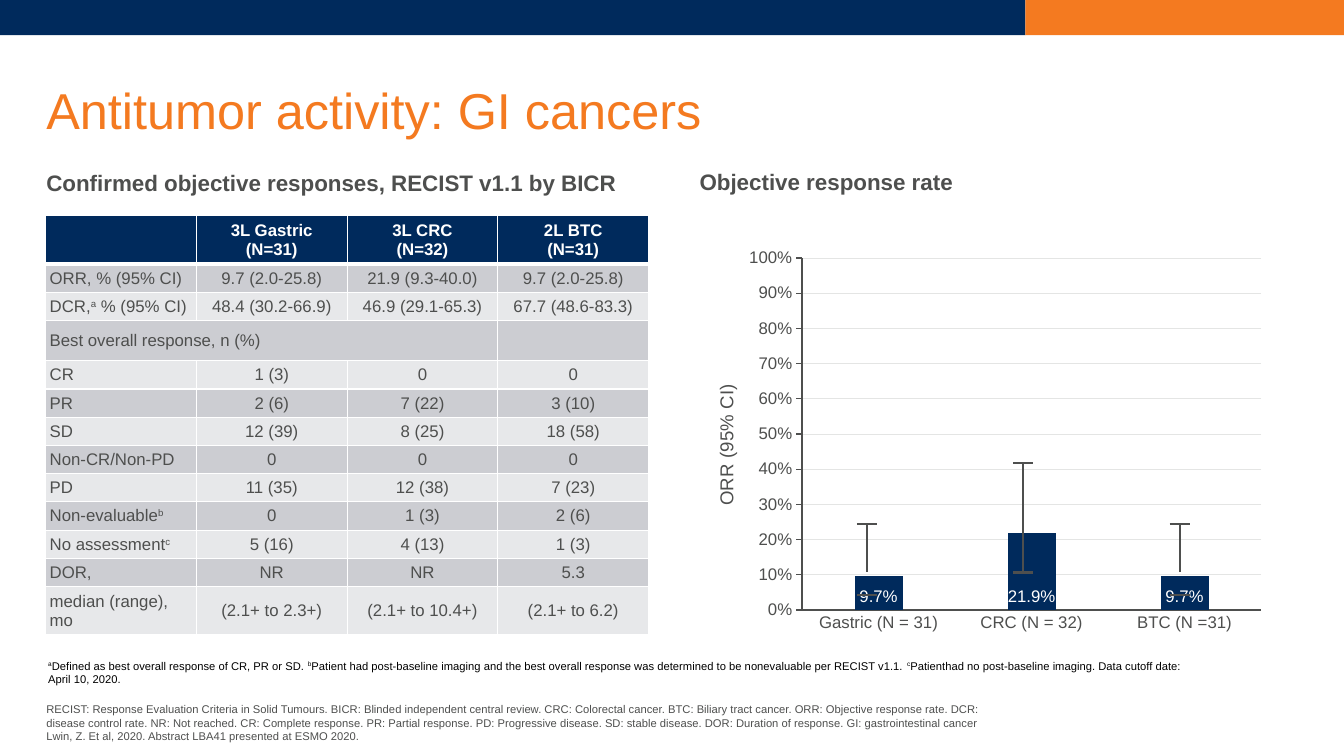
from lxml import etree
from pptx import Presentation
from pptx import util as u
from pptx.chart import data as cd
from pptx.dml.color import RGBColor
from pptx.enum import chart as ch, shapes, text
from pptx.oxml import parse_xml
from pptx.oxml.ns import nsdecls, qn

COLORS = {"navy": "002A5C", "orange": "F47A20", "gray": "4E4F4E", "black": "000000",
          "white": "FFFFFF", "dark_band": "CCCDD2", "light_band": "E7E8EA", "grid": "E4E5E4"}
FONT = "Arial"
SLIDE_W, SLIDE_H = 13.33, 7.5

BANDS = [(0, 76.3, "navy"), (76.3, 23.7, "orange")]
BAND_H = 4.67

TEXTS = [
    {"box": (3.45, 5.33, 93.25, 19.33), "size": 36, "color": "orange", "inset": (0, 0, 0, 0),
     "anchor": "MIDDLE", "spacing": 0.9, "lines": "Antitumor activity: GI cancers"},
    {"box": (3.45, 22.4, 89.6, 3.6), "size": 16, "color": "gray", "bold": True,
     "inset": (0, 0, 0.1, 0), "lines": "Confirmed objective responses, RECIST v1.1 by BICR"},
    {"box": (51.31, 21.6, 31.7, 4.93), "size": 16, "color": "gray", "bold": True,
     "lines": "Objective response rate"},
    {"box": (2.85, 86.53, 86.5, 4.93), "size": 8, "color": "black",
     "lines": "^a^Defined as best overall response of CR, PR or SD. ^b^Patient had post-baseline "
              "imaging and the best overall response was determined to be nonevaluable per RECIST "
              "v1.1. ^c^Patienthad no post-baseline imaging. Data cutoff date: April 10, 2020."},
    {"box": (3.45, 92.93, 70.3, 5.33), "size": 8, "color": "gray", "inset": (0, 0, 0, 0),
     "anchor": "BOTTOM",
     "lines": "RECIST: Response Evaluation Criteria in Solid Tumours. BICR: Blinded independent "
              "central review. CRC: Colorectal cancer. BTC: Biliary tract cancer. ORR: Objective "
              "response rate. DCR: disease control rate. NR: Not reached. CR: Complete response. "
              "PR: Partial response. PD: Progressive disease. SD: stable disease. DOR: Duration of "
              "response. GI: gastrointestinal cancer\n"
              "Lwin, Z. Et al, 2020. Abstract LBA41 presented at ESMO 2020."},
]

ROWS = [
    ("", "3L Gastric\n(N=31)", "3L CRC\n(N=32)", "2L BTC\n(N=31)"),
    ("ORR, % (95% CI)", "9.7 (2.0-25.8)", "21.9 (9.3-40.0)", "9.7 (2.0-25.8)"),
    ("DCR,^a^ % (95% CI)", "48.4 (30.2-66.9)", "46.9 (29.1-65.3)", "67.7 (48.6-83.3)"),
    ("Best overall response, n (%)", "", "", ""),
    ("CR", "1 (3)", "0", "0"),
    ("PR", "2 (6)", "7 (22)", "3 (10)"),
    ("SD", "12 (39)", "8 (25)", "18 (58)"),
    ("Non-CR/Non-PD", "0", "0", "0"),
    ("PD", "11 (35)", "12 (38)", "7 (23)"),
    ("Non-evaluable^b^", "0", "1 (3)", "2 (6)"),
    ("No assessment^c^", "5 (16)", "4 (13)", "1 (3)"),
    ("DOR,", "NR", "NR", "5.3"),
    ("median (range), mo", "(2.1+ to 2.3+)", "(2.1+ to 10.4+)", "(2.1+ to 6.2)"),
]
SECTION_ROW = 3
TALL_ROWS = (0, SECTION_ROW)
TABLE_BOX = (3.4, 28.53, 44.86, 55.2)
CELL_INSET = (0.04,) * 4

RATES = [("Gastric (N = 31)", 0.097), ("CRC (N = 32)", 0.219), ("BTC (N =31)", 0.097)]
CHART_BOX = (51.16, 31.87, 43.5, 52.8)
PLOT = {"layoutTarget": "inner", "xMode": "edge", "yMode": "edge",
        "x": 0.196, "y": 0.043, "w": 0.785, "h": 0.882}
AXIS_TITLE = {"xMode": "edge", "yMode": "edge", "x": 0.04, "y": 0.35}

INTERVALS = [(69.33, 75.73, 78.67), (61.2, 75.73, 75.73), (69.33, 75.73, 78.67)]
FIRST_BAR, BAR_STEP, CAP = 64.5, 11.64, 0.75


def rgb(name):
    return RGBColor.from_string(COLORS[name])


def across(share):
    return u.Inches(SLIDE_W * share / 100)


def down(share):
    return u.Inches(SLIDE_H * share / 100)


def place(x, y, w, h):
    return across(x), down(y), across(w), down(h)


def style(font, size, color, bold=False):
    font.name, font.size, font.bold = FONT, u.Pt(size), bold
    font.color.rgb = rgb(color)


def write(tf, lines, size, color, bold=False, align=None, spacing=None):
    for i, line in enumerate(lines.split("\n")):
        p = tf.paragraphs[0] if i == 0 else tf.add_paragraph()
        p.alignment, p.line_spacing = align, spacing
        for j, piece in enumerate(line.split("^")):
            if piece:
                r = p.add_run()
                r.text = piece
                style(r.font, size, color, bold)
                if j % 2:
                    r._r.get_or_add_rPr().set("baseline", "30000")


def set_inset(target, inset):
    sides = ("margin_left", "margin_top", "margin_right", "margin_bottom")
    for side, value in zip(sides, inset):
        setattr(target, side, u.Inches(value))


def add_text(s, item):
    tf = s.shapes.add_textbox(*place(*item["box"])).text_frame
    tf.word_wrap = True
    tf.vertical_anchor = getattr(text.MSO_ANCHOR, item.get("anchor", "TOP"))
    set_inset(tf, item.get("inset", (0.1, 0.05, 0.1, 0.05)))
    write(tf, item["lines"], item["size"], item["color"], item.get("bold", False),
          spacing=item.get("spacing"))


def set_borders(cell, row):
    widths = {"lnL": 1, "lnR": 1, "lnT": 3 if row == 1 else 1, "lnB": 3 if row == 0 else 1}
    tcPr = cell._tc.get_or_add_tcPr()
    for i, (side, width) in enumerate(widths.items()):
        tcPr.insert(i, parse_xml(
            f'<a:{side} {nsdecls("a")} w="{u.Pt(width)}"><a:solidFill>'
            f'<a:srgbClr val="{COLORS["white"]}"/></a:solidFill></a:{side}>'))


def add_table(s):
    table = s.shapes.add_table(len(ROWS), len(ROWS[0]), *place(*TABLE_BOX)).table
    for i, values in enumerate(ROWS):
        table.rows[i].height = u.Inches(0.4 if i in TALL_ROWS else 0.23)
        band = "navy" if i == 0 else "dark_band" if i % 2 else "light_band"
        for j, value in enumerate(values):
            cell = table.cell(i, j)
            cell.fill.solid()
            cell.fill.fore_color.rgb = rgb(band)
            cell.vertical_anchor = text.MSO_ANCHOR.MIDDLE
            set_inset(cell, CELL_INSET)
            set_borders(cell, i)
            write(cell.text_frame, value, 12, "gray" if i else "white", i == 0,
                  text.PP_ALIGN.CENTER if j else None)
    table.cell(SECTION_ROW, 0).merge(table.cell(SECTION_ROW, 2))


def set_layout(parent, values, index):
    for old in parent.findall(qn("c:layout")):
        parent.remove(old)
    layout = etree.Element(qn("c:layout"))
    manual = etree.SubElement(layout, qn("c:manualLayout"))
    for key, value in values.items():
        etree.SubElement(manual, qn(f"c:{key}")).set("val", str(value))
    parent.insert(index, layout)


def add_chart(s):
    data = cd.CategoryChartData(number_format="0.0%")
    data.categories = [name for name, _ in RATES]
    data.add_series("Series 1", [rate for _, rate in RATES])
    chart = s.shapes.add_chart(ch.XL_CHART_TYPE.COLUMN_CLUSTERED, *place(*CHART_BOX), data).chart
    chart.has_legend = chart.has_title = False
    style(chart.font, 10, "gray")
    plot = chart.plots[0]
    plot.gap_width, plot.overlap, plot.vary_by_categories = 219, -27, False
    fill = plot.series[0].format.fill
    fill.solid()
    fill.fore_color.rgb = rgb("navy")
    plot.has_data_labels = True
    labels = plot.data_labels
    labels.show_value, labels.position = True, ch.XL_LABEL_POSITION.INSIDE_BASE
    labels.number_format, labels.number_format_is_linked = "0.0%", False
    style(labels.font, 12, "white")
    cats, vals = chart.category_axis, chart.value_axis
    for axis, tick in ((cats, ch.XL_TICK_MARK.NONE), (vals, ch.XL_TICK_MARK.OUTSIDE)):
        axis.major_tick_mark, axis.minor_tick_mark = tick, ch.XL_TICK_MARK.NONE
        style(axis.tick_labels.font, 12, "gray")
        axis.format.line.color.rgb = rgb("gray")
        axis.format.line.width = u.Pt(1)
    vals.minimum_scale, vals.maximum_scale, vals.major_unit = 0, 1, 0.1
    vals.tick_labels.number_format, vals.tick_labels.number_format_is_linked = "0%", False
    vals.major_gridlines.format.line.color.rgb = rgb("grid")
    vals.major_gridlines.format.line.width = u.Pt(0.75)
    write(vals.axis_title.text_frame, "ORR (95% CI)", 13.3, "gray")
    set_layout(vals.axis_title._element, AXIS_TITLE, 1)
    set_layout(chart._chartSpace.chart.plotArea, PLOT, 0)


def add_line(s, x1, y1, x2, y2):
    line = s.shapes.add_connector(shapes.MSO_CONNECTOR.STRAIGHT,
                                  across(x1), down(y1), across(x2), down(y2))
    line.line.color.rgb = rgb("gray")
    line.line.width = u.Pt(1.5)
    etree.SubElement(line._element.spPr, qn("a:effectLst"))


def main():
    prs = Presentation()
    prs.slide_width, prs.slide_height = u.Inches(SLIDE_W), u.Inches(SLIDE_H)
    s = prs.slides.add_slide(prs.slide_layouts[6])
    for x, w, color in BANDS:
        sp = s.shapes.add_shape(shapes.MSO_SHAPE.RECTANGLE, *place(x, 0, w, BAND_H))
        sp.shadow.inherit = False
        sp.fill.solid()
        sp.fill.fore_color.rgb = rgb(color)
        sp.line.fill.background()
    for item in TEXTS:
        add_text(s, item)
    add_table(s)
    add_chart(s)
    for i, (top, stem_end, low) in enumerate(INTERVALS):
        x = FIRST_BAR + i * BAR_STEP
        add_line(s, x, top, x, stem_end)
        for y in (top, low):
            add_line(s, x - CAP, y, x + CAP, y)
    prs.save("out.pptx")


if __name__ == "__main__":
    main()
